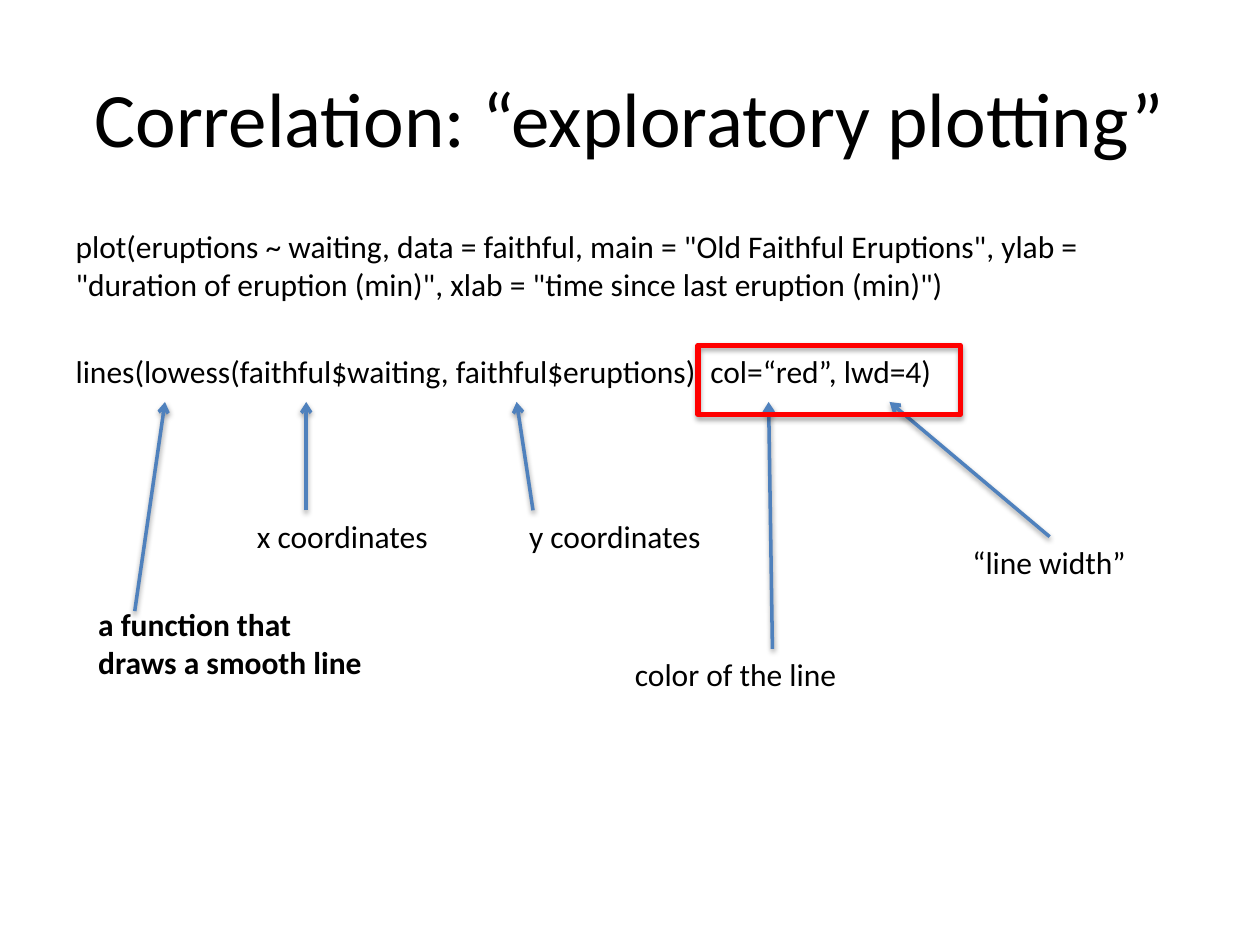
from lxml import etree
from pptx import Presentation
from pptx.dml.color import RGBColor
from pptx.enum import shapes, text
from pptx.oxml import ns
from pptx.util import Pt

COLORS = {"ink": "000000", "arrow": "4F81BD", "highlight": "FF0000"}
FONT = "Calibri"
TITLE_BOX = (36, 21.6, 648, 90)
CODE_BOX = (36, 126, 648, 356.4)
TIP_Y = 103.7  # just below the lines() call, within the code box

PLOT_CALL = ('plot(eruptions ~ waiting, data = faithful, main = "Old Faithful Eruptions", '
             'ylab = "duration of eruption (min)", xlab = "time since last eruption (min)")')
LINES_CALL = "lines(lowess(faithful$waiting, faithful$eruptions), col=“red”, lwd=4)"

# label lines, (left, top, width, height), arrow start (x, y), arrow tip x, bold
ANNOTATIONS = [
    (["x coordinates"], (103.7, 165.6, 113.8, 29), (139, 165.6), 139, False),
    (["y coordinates"], (259.2, 165.6, 114.5, 29), (268.6, 165.6), 259.2, False),
    (["color of the line"], (319.7, 244.8, 131, 29), (405.4, 244.8), 403.2, False),
    (["“line width”"], (512.6, 180.7, 103, 29), (563.8, 180.7), 472.3, False),
    (["a function that", "draws a smooth line"], (13, 216, 167, 51), (41, 223.2), 58.3, True),
]


def rgb(name):
    return RGBColor.from_string(COLORS[name])


def place(part, left, top, width, height):
    part.left, part.top, part.width, part.height = map(Pt, (left, top, width, height))


def write(frame, lines, size=18, bold=False, align=text.PP_ALIGN.LEFT):
    for index, line in enumerate(lines):
        paragraph = frame.paragraphs[0] if index == 0 else frame.add_paragraph()
        paragraph.alignment = align
        run = paragraph.add_run()
        run.text = line
        run.font.name, run.font.size, run.font.bold = FONT, Pt(size), bold
        run.font.color.rgb = rgb("ink")


def outline(part, color, width):
    part.line.color.rgb = rgb(color)
    part.line.width = Pt(width)


def drop_shadow(part, distance, opacity):
    """Give the part a soft black shadow straight below it."""
    effects = etree.SubElement(part._element.spPr, ns.qn("a:effectLst"))
    shadow = etree.SubElement(effects, ns.qn("a:outerShdw"), blurRad=str(Pt(3.1)),
                              dist=str(Pt(distance)), dir="5400000", rotWithShape="0")
    black = etree.SubElement(shadow, ns.qn("a:srgbClr"), val=COLORS["ink"])
    etree.SubElement(black, ns.qn("a:alpha"), val=str(opacity * 1000))


def add_title(slide, box):
    title = slide.shapes.title
    place(title, *box)
    title.text_frame.vertical_anchor = text.MSO_ANCHOR.MIDDLE
    write(title.text_frame, ["Correlation: “exploratory plotting”"],
          size=44, align=text.PP_ALIGN.CENTER)


def add_code(slide, box):
    code = slide.placeholders[1]
    place(code, *box)
    frame = code.text_frame
    frame.auto_size = text.MSO_AUTO_SIZE.NONE
    write(frame, [PLOT_CALL, LINES_CALL])
    for paragraph in frame.paragraphs:
        properties = paragraph._p.get_or_add_pPr()
        properties.set("marL", "0")
        properties.set("indent", "0")
        etree.SubElement(properties, ns.qn("a:buNone"))
    frame.paragraphs[1].space_before = Pt(28.5)


def add_arrow(slide, start, tip):
    arrow = slide.shapes.add_connector(shapes.MSO_CONNECTOR.STRAIGHT,
                                       *map(Pt, (*start, *tip)))
    outline(arrow, "arrow", 2)
    etree.SubElement(arrow.line._get_or_add_ln(), ns.qn("a:tailEnd"), type="arrow")
    drop_shadow(arrow, distance=1.6, opacity=38)


def add_annotations(slide, box):
    left, top = box[:2]
    for lines, (x, y, width, height), (start_x, start_y), tip_x, bold in ANNOTATIONS:
        label = slide.shapes.add_textbox(*map(Pt, (left + x, top + y, width, height)))
        label.text_frame.word_wrap = False
        label.text_frame.auto_size = text.MSO_AUTO_SIZE.SHAPE_TO_FIT_TEXT
        write(label.text_frame, lines, bold=bold)
        add_arrow(slide, (left + start_x, top + start_y), (left + tip_x, top + TIP_Y))


def add_highlight(slide, box):
    """Frame the optional arguments of the lines() call."""
    left, top = box[:2]
    highlight = slide.shapes.add_shape(shapes.MSO_SHAPE.RECTANGLE,
                                       *map(Pt, (left + 362.9, top + 71.3, 149.8, 39.6)))
    highlight.fill.background()
    outline(highlight, "highlight", 3)
    drop_shadow(highlight, distance=1.8, opacity=35)


def main():
    deck = Presentation()
    deck.slide_width, deck.slide_height = Pt(720), Pt(540)
    slide = deck.slides.add_slide(deck.slide_layouts[1])
    add_title(slide, TITLE_BOX)
    add_code(slide, CODE_BOX)
    add_annotations(slide, CODE_BOX)
    add_highlight(slide, CODE_BOX)
    deck.save("out.pptx")


if __name__ == "__main__":
    main()
